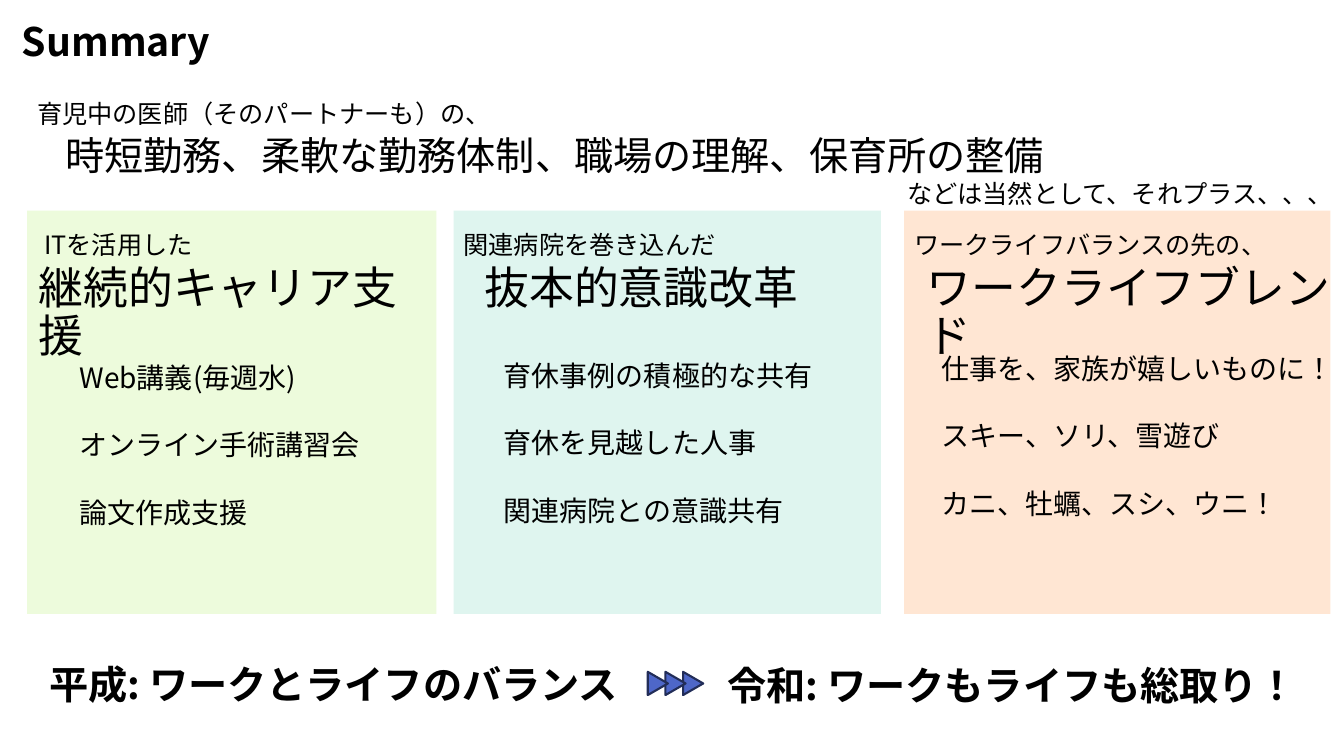
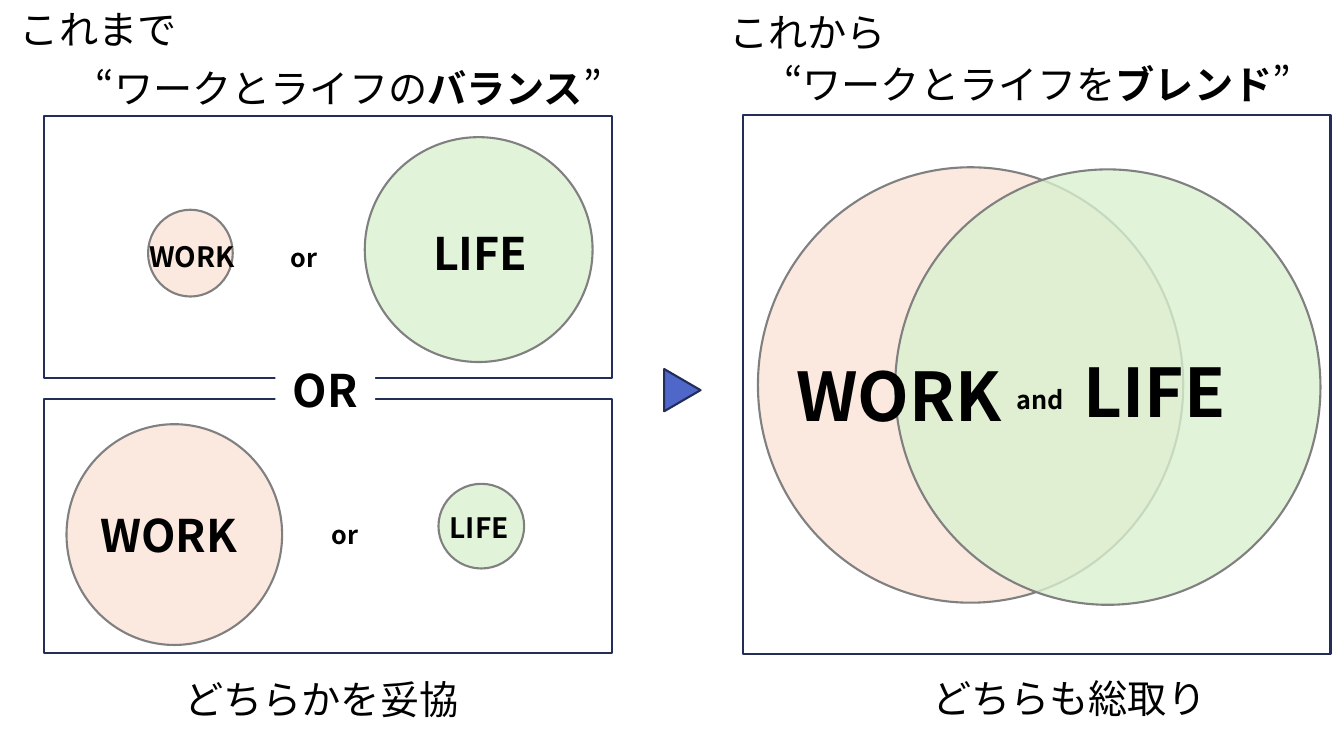
from lxml import etree
from pptx import Presentation
from pptx.dml.color import RGBColor
from pptx.enum.lang import MSO_LANGUAGE_ID
from pptx.enum.shapes import MSO_SHAPE
from pptx.enum.text import MSO_ANCHOR, PP_ALIGN
from pptx.oxml.ns import qn
from pptx.util import Pt

RECTANGLE, OVAL, TRIANGLE = MSO_SHAPE.RECTANGLE, MSO_SHAPE.OVAL, MSO_SHAPE.ISOSCELES_TRIANGLE
LEFT, CENTER, TOP = PP_ALIGN.LEFT, PP_ALIGN.CENTER, MSO_ANCHOR.TOP
JAPANESE = MSO_LANGUAGE_ID.JAPANESE

BLACK = RGBColor(0x00, 0x00, 0x00)
WHITE = RGBColor(0xFF, 0xFF, 0xFF)
NAVY = RGBColor(0x22, 0x2D, 0x58)
BLUE = RGBColor(0x4E, 0x67, 0xC8)
GRAY = RGBColor(0x80, 0x80, 0x80)
LIME = RGBColor(0xED, 0xFB, 0xDC)
MINT = RGBColor(0xDF, 0xF5, 0xEF)
PEACH = RGBColor(0xFF, 0xE6, 0xD3)
WORK_PINK = RGBColor(0xFB, 0xE3, 0xD6)
LIFE_GREEN = RGBColor(0xD9, 0xF2, 0xD0)

FONT = "Noto Sans CJK JP"
LINE_HEIGHT = 1.2
LINE_WIDTH = 1.5
BODY, SMALL, LARGE, HEADING, HUGE = 20, 18, 28, 32, 48


class Deck:
    """Holds the presentation, its style and the slide being built."""

    def __init__(self):
        self.presentation = Presentation()
        self.presentation.slide_width = Pt(960)
        self.presentation.slide_height = Pt(540)
        self.slide = None

    def new_slide(self):
        self.slide = self.presentation.slides.add_slide(self.presentation.slide_layouts[6])

    def text(self, content, left, top, width, height=30, *, size=LARGE, bold=False,
             align=LEFT, spacing=1.0, gap=0):
        """Add text: a string, or a list of paragraphs that are strings or (text, bold) lists."""
        box = self.slide.shapes.add_textbox(Pt(left), Pt(top), Pt(width), Pt(height))
        frame = box.text_frame
        frame.word_wrap = True
        frame.vertical_anchor = TOP
        if align == LEFT:
            frame.margin_right = 0
        paragraphs = [content] if isinstance(content, str) else content
        for index, runs in enumerate(paragraphs):
            paragraph = frame.add_paragraph() if index else frame.paragraphs[0]
            paragraph.alignment = align
            paragraph.line_spacing = Pt(size * LINE_HEIGHT * spacing)
            paragraph.space_before = Pt(gap if index else 0)
            for words, is_bold in [(runs, bold)] if isinstance(runs, str) else runs:
                run = paragraph.add_run()
                run.text = words
                run.font.name = FONT
                run.font.size = Pt(size)
                run.font.bold = is_bold
                run.font.language_id = JAPANESE
                run.font.color.rgb = BLACK
                east_asian = etree.SubElement(run.font._element, qn("a:ea"))
                east_asian.set("typeface", FONT)

    def shape(self, kind, left, top, width, height, *, fill=None, line=None, opacity=100):
        shape = self.slide.shapes.add_shape(kind, Pt(left), Pt(top), Pt(width), Pt(height))
        shape.shadow.inherit = False
        if fill is None:
            shape.fill.background()
        else:
            shape.fill.solid()
            shape.fill.fore_color.rgb = fill
            if opacity < 100:
                color = shape.fill._xPr.find(qn("a:solidFill"))[0]
                etree.SubElement(color, qn("a:alpha")).set("val", str(opacity * 1000))
        if line is None:
            shape.line.fill.background()
        else:
            shape.line.color.rgb = line
            shape.line.width = Pt(LINE_WIDTH)
        return shape

    def frame(self, left, top, width, height):
        self.shape(RECTANGLE, left, top, width, height, line=NAVY)

    def circle(self, color, left, top, width, height):
        self.shape(OVAL, left, top, width, height, fill=color, line=GRAY, opacity=79)

    def pointer(self, left, top, width, height):
        """Add a triangle that is turned to point right."""
        self.shape(TRIANGLE, left, top, width, height, fill=BLUE, line=NAVY).rotation = 90

    def label(self, words, left, top, width, size):
        self.text(words, left, top, width, size * 1.4, size=size, bold=True, align=CENTER)


def build_summary(deck):
    deck.new_slide()
    deck.text("Summary", 8.6, 9, 185, 41, bold=True)
    deck.text("育児中の医師（そのパートナーも）の、", 19.4, 67, 484, size=SMALL)
    deck.text("時短勤務、柔軟な勤務体制、職場の理解、保育所の整備", 39.6, 93.6, 900, 40, spacing=0.9)
    deck.text("などは当然として、それプラス、、、", 640.8, 124, 311, size=SMALL)

    # panel: colour, left, width; then (text, left, width) for lead and heading;
    # then the items with their left and top
    panels = [
        (LIME, 19.4, 292.4, ("ITを活用した", 24.5, 166), ("継続的キャリア支援", 20.5, 291.6),
         ["Web講義(毎週水)", "オンライン手術講習会", "論文作成支援"], 49.7, 254),
        (MINT, 324, 305.3, ("関連病院を巻き込んだ", 324, 229), ("抜本的意識改革", 339, 286.6),
         ["育休事例の積極的な共有", "育休を見越した人事", "関連病院との意識共有"], 352.8, 252.7),
        (PEACH, 645.8, 304.6, ("ワークライフバランスの先の、", 645.8, 273),
         ("ワークライフブレンド", 655, 305),
         ["仕事を、家族が嬉しいものに！", "スキー、ソリ、雪遊び", "カニ、牡蠣、スシ、ウニ！"],
         665.3, 247.7),
    ]
    for color, left, width, lead, heading, items, items_left, items_top in panels:
        deck.shape(RECTANGLE, left, 150.5, width, 288, fill=color)
        deck.text(lead[0], lead[1], 160.5, lead[2], size=SMALL)
        deck.text(heading[0], heading[1], 185.8, heading[2], 46, size=HEADING, spacing=0.9)
        deck.text(items, items_left, items_top, 294, 128, size=BODY, gap=24)

    deck.text("平成: ワークとライフのバランス", 28, 471.6, 444, 60, bold=True, spacing=0.9)
    for step in (2, 1, 0):
        deck.pointer(461.6 + 12.6 * step, 481, 16.6, 14.4)
    deck.text("令和: ワークもライフも総取り！", 512.6, 472.3, 435, 60, bold=True, spacing=0.9)


def build_comparison(deck):
    deck.new_slide()
    deck.text("これまで", 7.2, 7.2, 138, 37, spacing=0.8)
    deck.text([[("“ワークとライフの", False), ("バランス", True), ("”", False)]],
              61.2, 46, 438, 48, spacing=0.9)
    deck.frame(31.7, 82.8, 405.4, 187.2)
    deck.frame(31.7, 285, 405.4, 181.5)

    deck.circle(WORK_PINK, 105.8, 149.8, 60.5, 62)
    deck.label("WORK", 71.3, 167.8, 131.8, BODY)
    deck.label("or", 196, 169.2, 42, SMALL)
    deck.circle(LIFE_GREEN, 260.6, 98, 162.7, 160.6)
    deck.label("LIFE", 277.2, 157.7, 131.8, HEADING)

    deck.circle(WORK_PINK, 47.5, 303, 154, 157.7)
    deck.label("WORK", 54.7, 359.3, 131.8, HEADING)
    deck.label("or", 225.5, 367.2, 42, SMALL)
    deck.circle(LIFE_GREEN, 313.2, 345.6, 61.2, 60.5)
    deck.label("LIFE", 276.4, 361.4, 131.8, BODY)

    deck.shape(RECTANGLE, 196.6, 255.6, 71.3, 46, fill=WHITE)
    deck.label("OR", 196.6, 255.6, 71.3, HEADING)
    deck.text("どちらかを妥協", 124.6, 482.4, 253, 48, spacing=0.9)

    deck.pointer(472.3, 265.7, 30.2, 26)

    deck.text("これから", 514, 9.4, 138, 37, spacing=0.8)
    deck.text([[("“ワークとライフを", False), ("ブレンド", True), ("”", False)]],
              553, 46, 407, 48, spacing=0.8)
    deck.frame(530.6, 82, 419.8, 385.2)
    deck.circle(WORK_PINK, 541.4, 119.5, 303.8, 311)
    deck.circle(LIFE_GREEN, 639.4, 121, 303.8, 311)
    deck.label("WORK", 559.4, 249.8, 165.6, HUGE)
    deck.label("and", 715.3, 270.7, 55, SMALL)
    deck.label("LIFE", 758.9, 247, 131.8, HUGE)
    deck.text("どちらも総取り", 658.8, 481.7, 253, 48, spacing=0.9)


def main():
    deck = Deck()
    build_summary(deck)
    build_comparison(deck)
    deck.presentation.save("out.pptx")


if __name__ == "__main__":
    main()
